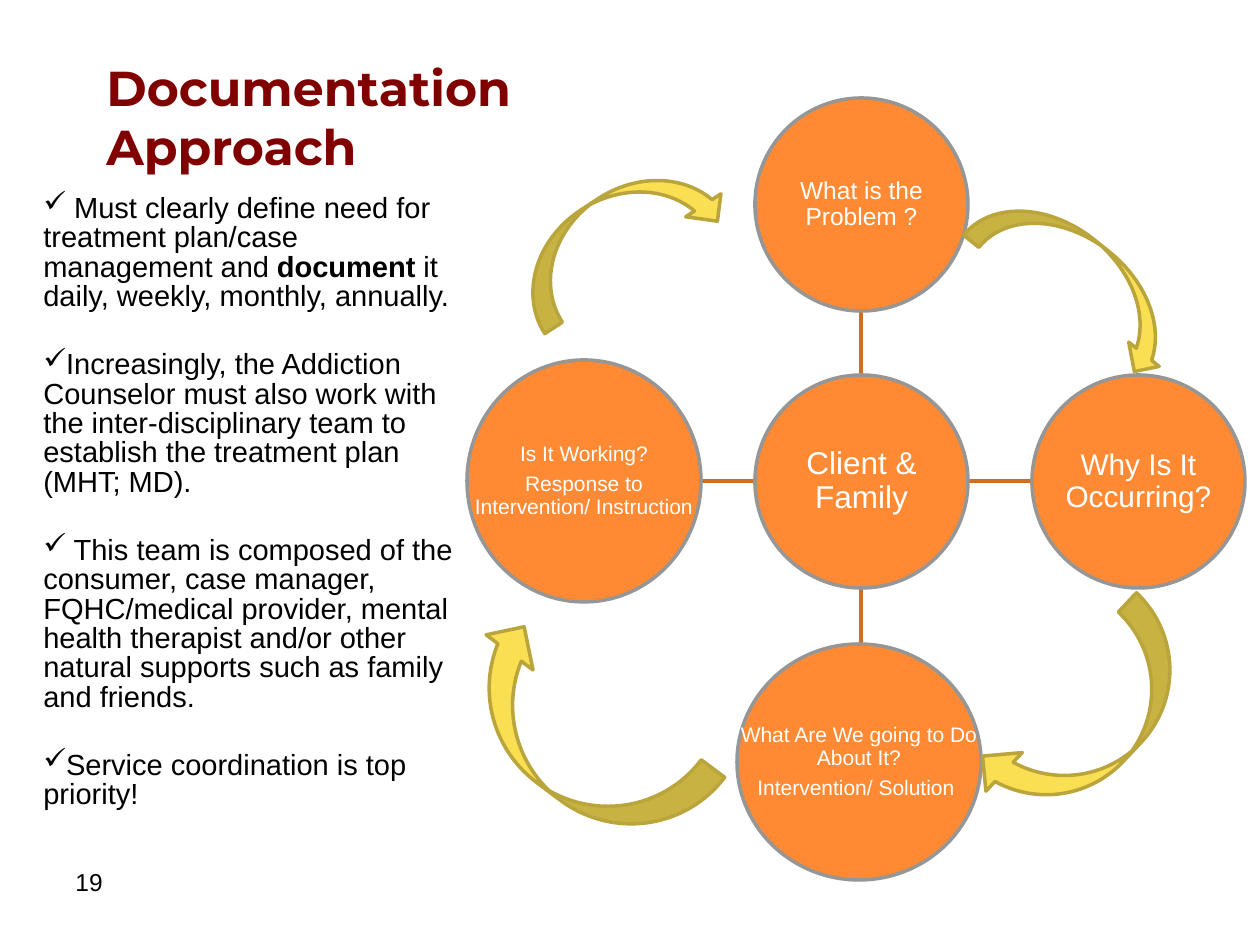
from dataclasses import dataclass

from lxml.etree import SubElement
from pptx import Presentation
from pptx.dml.color import RGBColor
from pptx.enum.shapes import MSO_CONNECTOR, MSO_SHAPE
from pptx.enum.text import MSO_ANCHOR, PP_ALIGN
from pptx.oxml.ns import qn
from pptx.util import Emu, Pt

EMU_PER_PX = 914400 / 126
WHITE = RGBColor(0xFF, 0xFF, 0xFF)
BLACK = RGBColor(0x00, 0x00, 0x00)
MAROON = RGBColor(0x80, 0x00, 0x00)
ORANGE = RGBColor(0xFF, 0x8A, 0x33)
GREY = RGBColor(0x96, 0x96, 0x96)
RUST = RGBColor(0xCC, 0x6F, 0x29)
YELLOW = RGBColor(0xFB, 0xDF, 0x53)
OLIVE = RGBColor(0xBA, 0xA5, 0x3D)


@dataclass(frozen=True)
class Area:
    left: int
    top: int
    width: int
    height: int


@dataclass(frozen=True)
class Circle:
    area: Area
    size: int
    lines: tuple[str, ...]


@dataclass(frozen=True)
class Arrow:
    area: Area
    rotation: float


@dataclass(frozen=True)
class Span:
    text: str
    bold: bool = False


HUB = Area(755, 375, 213, 213)
ABOVE = Area(755, 98, 213, 213)
RIGHT = Area(1032, 375, 213, 213)
BELOW = Area(737, 644, 244, 236)
LEFT = Area(467, 360, 234, 242)

CIRCLES = (
    Circle(HUB, 18, ("Client & Family",)),
    Circle(ABOVE, 14, ("What is the Problem ?",)),
    Circle(RIGHT, 17, ("Why Is It Occurring?",)),
    Circle(BELOW, 12, ("What Are We going to Do About It?", "Intervention/ Solution ")),
    Circle(LEFT, 12, ("Is It Working?", "Response to Intervention/ Instruction")),
)

ARROWS = (
    Arrow(Area(1042, 160, 78, 238), 308.6),
    Arrow(Area(575, 123, 84, 227), 236.9),
    Arrow(Area(1036, 595, 106, 251), 43.3),
    Arrow(Area(519, 600, 117, 280), 126.9),
)

POINTS = (
    (
        Span(" Must clearly define need for treatment plan/case management and "),
        Span("document ", True),
        Span("it daily, weekly, monthly, annually."),
    ),
    (
        Span(
            "Increasingly, the Addiction Counselor must also work with the "
            "inter-disciplinary team to establish the treatment plan (MHT; MD)."
        ),
    ),
    (
        Span(
            " This team is composed of the consumer, case manager, FQHC/medical "
            "provider, mental health therapist and/or other natural supports such "
            "as family and friends."
        ),
    ),
    (Span("Service coordination is top priority!"),),
)


def px(value: int) -> Emu:
    return Emu(round(value * EMU_PER_PX))


def place(area: Area) -> tuple[Emu, ...]:
    return px(area.left), px(area.top), px(area.width), px(area.height)


def set_font(paragraph, name: str, size: float, color: RGBColor) -> None:
    paragraph.font.name = name
    paragraph.font.size = Pt(size)
    paragraph.font.color.rgb = color


def add_text_frame(page, area: Area):
    frame = page.shapes.add_textbox(*place(area)).text_frame
    frame.word_wrap = True
    return frame


def add_filled_shape(page, kind: MSO_SHAPE, area: Area, fill: RGBColor, line: RGBColor):
    shape = page.shapes.add_shape(kind, *place(area))
    shape.shadow.inherit = False
    shape.fill.solid()
    shape.fill.fore_color.rgb = fill
    shape.line.color.rgb = line
    shape.line.width = Pt(2)
    return shape


def add_circle(page, circle: Circle) -> None:
    add_filled_shape(page, MSO_SHAPE.OVAL, circle.area, ORANGE, GREY)
    frame = add_text_frame(page, circle.area)
    frame.vertical_anchor = MSO_ANCHOR.MIDDLE
    frame.margin_left = frame.margin_right = px(2)
    frame.margin_top = frame.margin_bottom = px(1)
    frame.text = "\n".join(circle.lines)
    for paragraph in frame.paragraphs:
        paragraph.alignment = PP_ALIGN.CENTER
        paragraph.line_spacing = 0.9
        paragraph.space_after = Pt(circle.size * 0.35)
        set_font(paragraph, "Arial", circle.size, WHITE)


def add_spoke(page, start: tuple[int, int], end: tuple[int, int]) -> None:
    spoke = page.shapes.add_connector(
        MSO_CONNECTOR.STRAIGHT, *(px(value) for value in start + end)
    )
    spoke.line.color.rgb = RUST
    spoke.line.width = Pt(2)
    SubElement(spoke._element.spPr, qn("a:effectLst"))


def add_spokes(page) -> None:
    x = HUB.left + HUB.width // 2
    y = HUB.top + HUB.height // 2
    add_spoke(page, (x, HUB.top), (x, ABOVE.top + ABOVE.height))
    add_spoke(page, (HUB.left + HUB.width, y), (RIGHT.left, y))
    add_spoke(page, (x, HUB.top + HUB.height), (x, BELOW.top))
    add_spoke(page, (HUB.left, y), (LEFT.left + LEFT.width, y))


def add_title(page) -> None:
    frame = add_text_frame(page, Area(94, 73, 651, 105))
    frame.vertical_anchor = MSO_ANCHOR.BOTTOM
    frame.margin_bottom = px(3)
    paragraph = frame.paragraphs[0]
    paragraph.text = "Documentation \vApproach"
    set_font(paragraph, "Montserrat", 28, MAROON)
    paragraph.font.bold = True


def add_points(page) -> None:
    frame = add_text_frame(page, Area(31, 189, 451, 693))
    for index, spans in enumerate(POINTS):
        paragraph = frame.add_paragraph() if index else frame.paragraphs[0]
        paragraph.line_spacing = 0.84
        if index:
            paragraph.space_before = Pt(22.3)
        properties = paragraph._p.get_or_add_pPr()
        SubElement(properties, qn("a:buChar"), char="✓")
        set_font(paragraph, "Arial", 16.6, BLACK)
        for span in spans:
            run = paragraph.add_run()
            run.text = span.text
            if span.bold:
                run.font.bold = True


def add_page_number(page) -> None:
    paragraph = add_text_frame(page, Area(63, 861, 293, 66)).paragraphs[0]
    paragraph.text = "19"
    set_font(paragraph, "Arial", 14, BLACK)


def main() -> None:
    deck = Presentation()
    deck.slide_width, deck.slide_height = px(1260), px(945)
    page = deck.slides.add_slide(deck.slide_layouts[6])
    add_title(page)
    add_spokes(page)
    for circle in CIRCLES:
        add_circle(page, circle)
    add_points(page)
    add_page_number(page)
    for arrow in ARROWS:
        shape = add_filled_shape(page, MSO_SHAPE.CURVED_LEFT_ARROW, arrow.area, YELLOW, OLIVE)
        shape.rotation = arrow.rotation
    deck.save("out.pptx")


if __name__ == "__main__":
    main()
